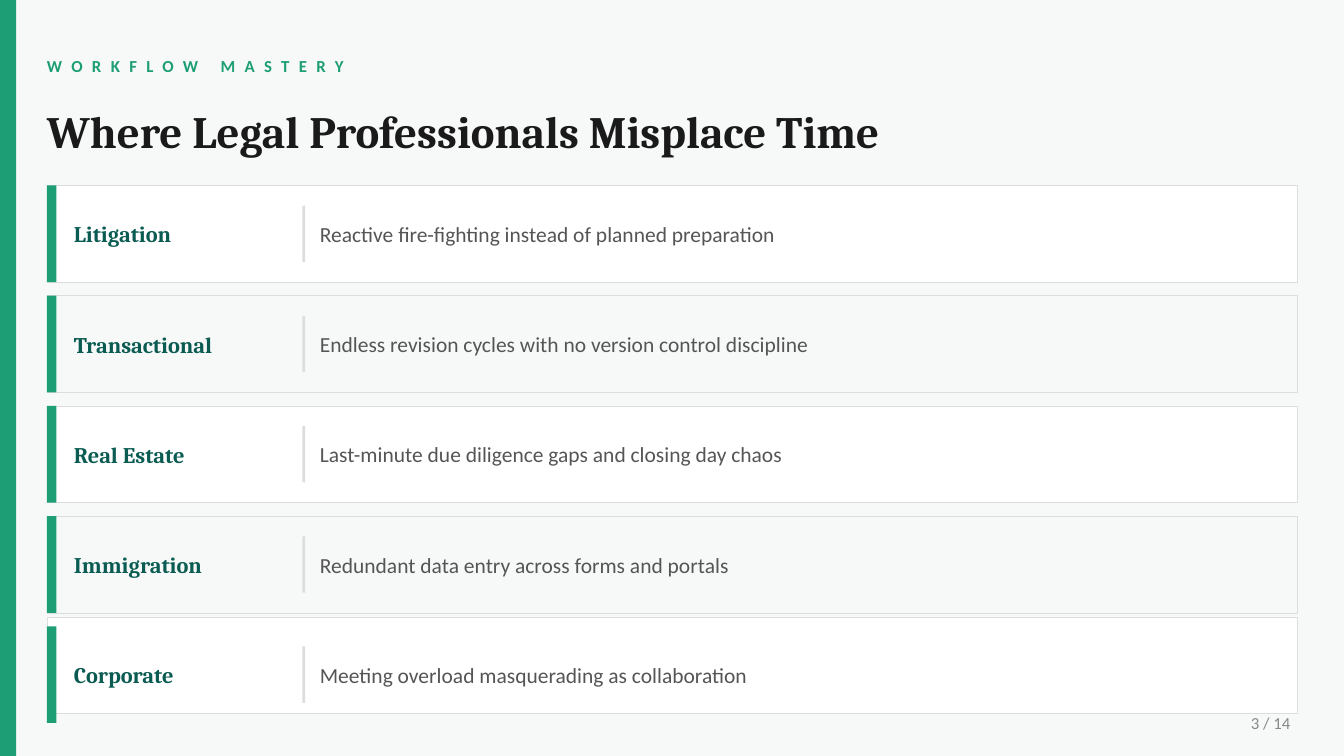
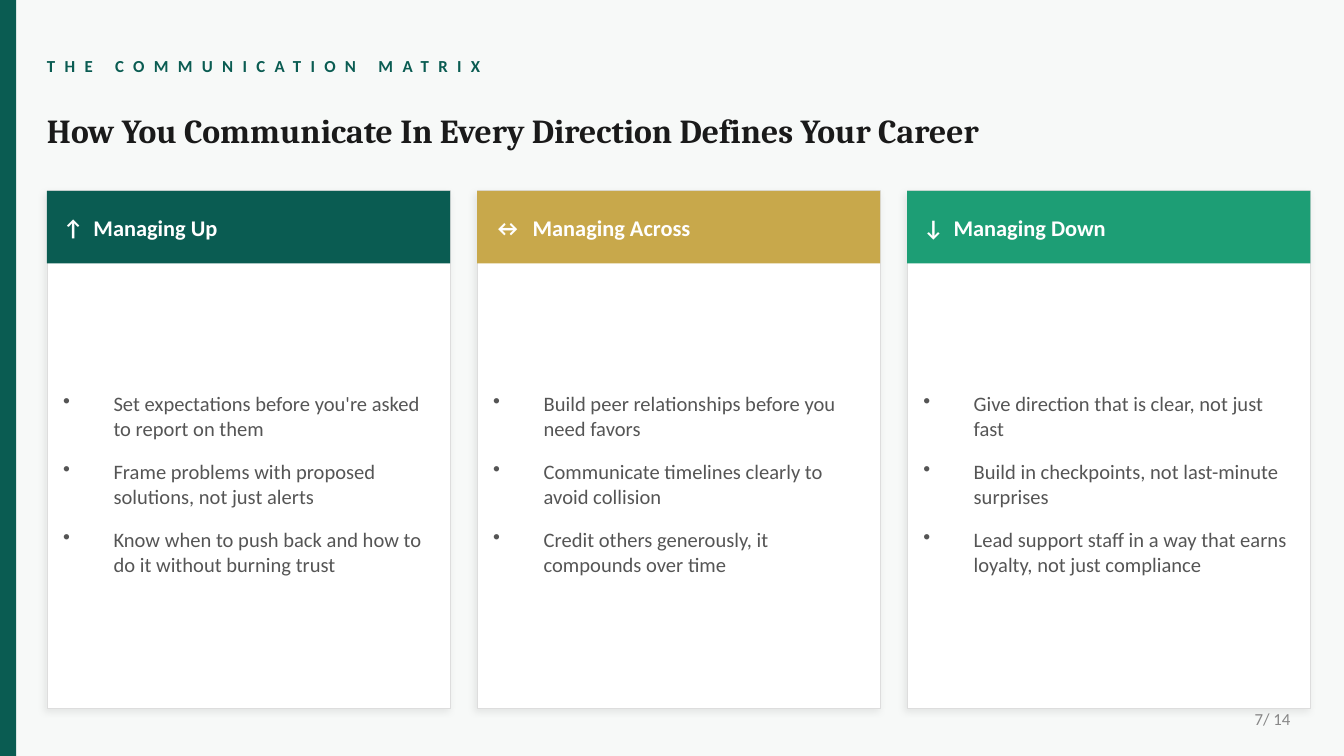
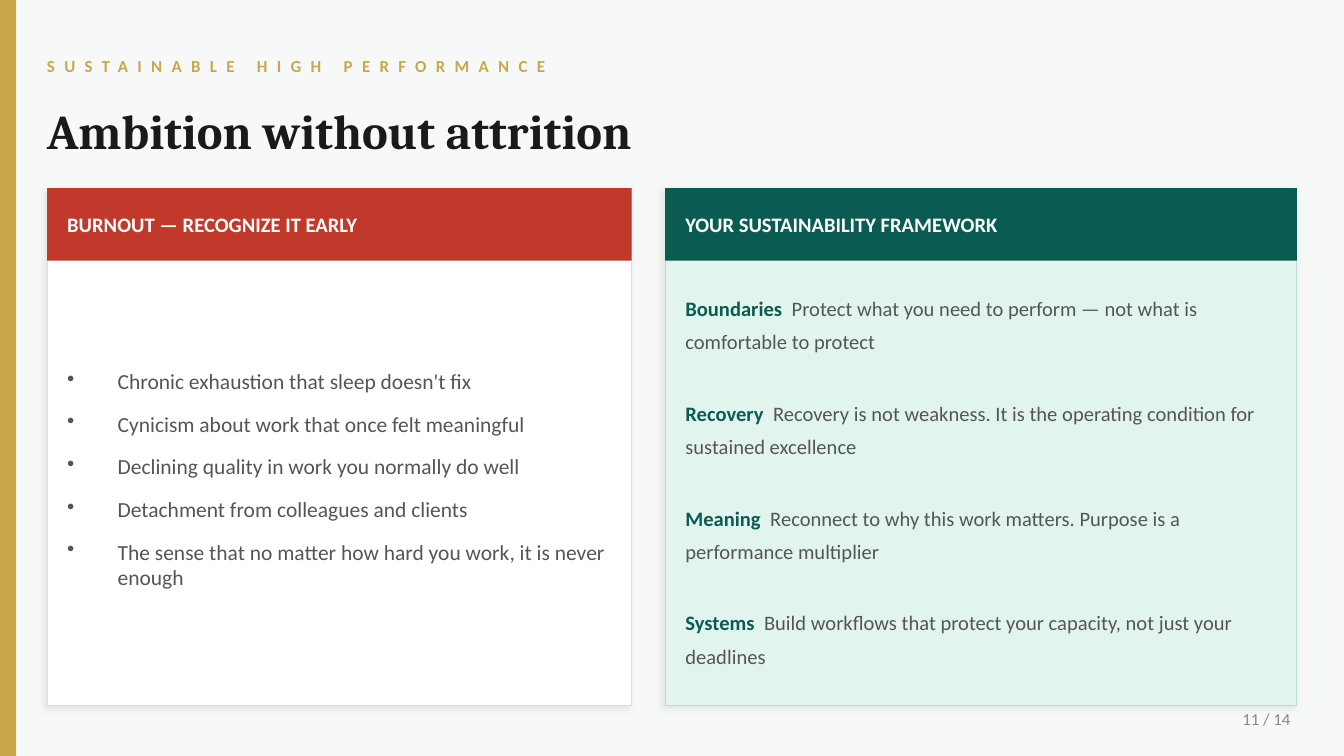
from lxml.etree import SubElement
from pptx import Presentation
from pptx.dml.color import RGBColor
from pptx.enum.shapes import MSO_SHAPE
from pptx.enum.text import MSO_ANCHOR, PP_ALIGN
from pptx.oxml.ns import qn
from pptx.util import Inches, Pt

SLIDE_W = 10
SLIDE_H = SLIDE_W * 9 / 16
MARGIN = 0.35
CARD_H, HEADER_H = 3.85, 0.54
BULLET_INDENT = Pt(27)

PAPER = RGBColor(0xF7, 0xF9, 0xF8)
WHITE = RGBColor(0xFF, 0xFF, 0xFF)
INK = RGBColor(0x1A, 0x1A, 0x1A)
BODY_GRAY = RGBColor(0x55, 0x55, 0x55)
PAGE_GRAY = RGBColor(0x88, 0x88, 0x88)
RULE_GRAY = RGBColor(0xDD, 0xDD, 0xDD)
GREEN = RGBColor(0x1D, 0x9E, 0x75)
TEAL = RGBColor(0x0A, 0x5C, 0x52)
GOLD = RGBColor(0xC8, 0xA8, 0x4B)
RED = RGBColor(0xC0, 0x39, 0x2B)
MINT = RGBColor(0xE1, 0xF5, 0xEE)
MINT_BORDER = RGBColor(0xB8, 0xDD, 0xD5)


def text_format(size, color, name="Calibri", bold=False):
    return {"size": Pt(size), "color": color, "name": name, "bold": bold}


PAGE_NUMBER = text_format(9, PAGE_GRAY)
ROW_LABEL = text_format(12, TEAL, "Cambria", True)
ROW_TEXT = text_format(11.5, BODY_GRAY)
CARD_TEXT = text_format(11, BODY_GRAY)
CARD_TERM = text_format(11, TEAL, bold=True)

TIME_LOSSES = [
    ("Litigation", "Reactive fire-fighting instead of planned preparation"),
    ("Transactional", "Endless revision cycles with no version control discipline"),
    ("Real Estate", "Last-minute due diligence gaps and closing day chaos"),
    ("Immigration", "Redundant data entry across forms and portals"),
    ("Corporate", "Meeting overload masquerading as collaboration"),
]
DIRECTIONS = [
    ("↑  Managing Up", TEAL, [
        "Set expectations before you're asked to report on them",
        "Frame problems with proposed solutions, not just alerts",
        "Know when to push back and how to do it without burning trust"]),
    ("↔  Managing Across", GOLD, [
        "Build peer relationships before you need favors",
        "Communicate timelines clearly to avoid collision",
        "Credit others generously, it compounds over time"]),
    ("↓  Managing Down", GREEN, [
        "Give direction that is clear, not just fast",
        "Build in checkpoints, not last-minute surprises",
        "Lead support staff in a way that earns loyalty, not just compliance"]),
]
BURNOUT_SIGNS = [
    "Chronic exhaustion that sleep doesn't fix",
    "Cynicism about work that once felt meaningful",
    "Declining quality in work you normally do well",
    "Detachment from colleagues and clients",
    "The sense that no matter how hard you work, it is never enough",
]
FRAMEWORK = [
    ("Boundaries  ", "Protect what you need to perform — not what is comfortable to protect"),
    ("Recovery  ", "Recovery is not weakness. It is the operating condition for sustained excellence"),
    ("Meaning  ", "Reconnect to why this work matters. Purpose is a performance multiplier"),
    ("Systems  ", "Build workflows that protect your capacity, not just your deadlines"),
]


def add_run(paragraph, text, style):
    run = paragraph.add_run()
    run.text = text
    for attribute, value in style.items():
        if attribute == "color":
            run.font.color.rgb = value
        else:
            setattr(run.font, attribute, value)


def add_text(slide, place, *runs, inset=True, **paragraph_format):
    """Add a one-paragraph box from (text, style) runs; inset=False removes margins."""
    box = slide.shapes.add_textbox(*map(Inches, place))
    frame = box.text_frame
    frame.word_wrap = True
    frame.vertical_anchor = MSO_ANCHOR.MIDDLE
    if not inset:
        for side in ("left", "top", "right", "bottom"):
            setattr(frame, f"margin_{side}", 0)
    for attribute, value in paragraph_format.items():
        setattr(frame.paragraphs[0], attribute, value)
    for text, style in runs:
        add_run(frame.paragraphs[0], text, style)
    return box


def add_bullets(slide, place, items, style, gap):
    box = add_text(slide, place, inset=False)
    frame = box.text_frame
    for _ in items[1:]:
        frame.add_paragraph()
    for element in box.element.iter(qn("a:p")):
        properties = element.get_or_add_pPr()
        properties.set("marL", str(BULLET_INDENT))
        properties.set("indent", str(-BULLET_INDENT))
        SubElement(properties, qn("a:buSzPct"), val="100000")
        SubElement(properties, qn("a:buChar"), char="•")
    for paragraph, item in zip(frame.paragraphs, items):
        paragraph.space_after = Pt(gap)
        add_run(paragraph, item, style)


def add_panel(slide, place, fill, border=None, border_width=0.5):
    panel = slide.shapes.add_shape(MSO_SHAPE.RECTANGLE, *map(Inches, place))
    panel.shadow.inherit = False
    panel.fill.solid()
    panel.fill.fore_color.rgb = fill
    if border is None:
        panel.line.fill.background()
    else:
        panel.line.color.rgb = border
        panel.line.width = Pt(border_width)
    return panel


def add_soft_shadow(panel):
    effects = panel.element.spPr.find(qn("a:effectLst"))
    shadow = SubElement(effects, qn("a:outerShdw"), blurRad=str(Pt(4)), dist=str(Pt(2)),
                        dir=str(135 * 60000), algn="bl", rotWithShape="0")
    black = SubElement(shadow, qn("a:srgbClr"), val="000000")
    SubElement(black, qn("a:alpha"), val="7000")


def add_page(deck, kicker, title, title_size, accent, page, page_place=(8.8, 5.25, 0.9, 0.2)):
    """Add a slide with background, page number, accent band, kicker and title."""
    slide = deck.slides.add_slide(deck.slide_layouts[6])
    slide.background.fill.solid()
    slide.background.fill.fore_color.rgb = PAPER
    add_text(slide, page_place, (page, PAGE_NUMBER), alignment=PP_ALIGN.RIGHT)
    add_panel(slide, (0, 0, 0.12, SLIDE_H), accent)
    kicker_box = add_text(slide, (MARGIN, 0.35, 9, 0.28),
                          (kicker, text_format(9, accent, bold=True)), inset=False)
    for properties in kicker_box.element.iter(qn("a:rPr")):
        properties.set("spc", "500")
    add_text(slide, (MARGIN, 0.72, 9, 0.5),
             (title, text_format(title_size, INK, "Cambria", True)), inset=False)
    return slide


def add_card(slide, place, heading, color, size, pad, header_gap,
             fill=WHITE, border=RULE_GRAY):
    left, top, width = place
    add_soft_shadow(add_panel(slide, (left, top, width, CARD_H), fill, border))
    add_panel(slide, (left, top, width, HEADER_H), color)
    add_text(slide, (left + pad, top + header_gap, width - 2 * pad, HEADER_H - 2 * header_gap),
             (heading, text_format(size, WHITE, bold=True)), inset=False)


def add_time_row(slide, top, fill, label, loss, bottom_limit):
    """Add one row, its card moved up where it would pass bottom_limit."""
    height = 0.72
    add_panel(slide, (MARGIN, min(top, bottom_limit - height), 9.3, height), fill, RULE_GRAY, 0.3)
    add_panel(slide, (MARGIN, top, 0.07, height), GREEN)
    add_text(slide, (0.55, top + 0.12, 1.6, 0.48), (label, ROW_LABEL), inset=False)
    add_panel(slide, (2.25, top + 0.15, 0.02, 0.42), RULE_GRAY)
    add_text(slide, (2.38, top + 0.1, 7.15, 0.52), (loss, ROW_TEXT), inset=False)


def build_time_losses(deck):
    page_top = 5.31
    slide = add_page(deck, "WORKFLOW MASTERY", "Where Legal Professionals Misplace Time",
                     24, GREEN, "3 / 14", (8.85, page_top, 0.85, 0.14))
    for index, (label, loss) in enumerate(TIME_LOSSES):
        fill = PAPER if index % 2 else WHITE
        add_time_row(slide, 1.38 + index * 0.82, fill, label, loss, page_top)


def build_communication_matrix(deck):
    slide = add_page(deck, "THE COMMUNICATION MATRIX",
                     "How You Communicate In Every Direction Defines Your Career",
                     18, TEAL, "7/ 14")
    width, pad = 3, 0.12
    for index, (heading, color, habits) in enumerate(DIRECTIONS):
        left = MARGIN + index * (width + 0.2)
        add_card(slide, (left, 1.42, width), heading, color, 12, pad, 0.06)
        add_bullets(slide, (left + pad, 2.05, width - 2 * pad, 3.1), habits, CARD_TEXT, 10)


def build_sustainability(deck):
    slide = add_page(deck, "SUSTAINABLE HIGH PERFORMANCE", "Ambition without attrition",
                     26, GOLD, "11 / 14")
    top, pad, header_gap = 1.4, 0.15, 0.07
    add_card(slide, (MARGIN, top, 4.35), "BURNOUT — RECOGNIZE IT EARLY", RED, 11, pad, header_gap)
    add_bullets(slide, (MARGIN + pad, 2.04, 4.05, 3.05), BURNOUT_SIGNS, ROW_TEXT, 9)
    left = 4.95
    add_card(slide, (left, top, 4.7), "YOUR SUSTAINABILITY FRAMEWORK", TEAL, 11, pad, header_gap,
             MINT, MINT_BORDER)
    for index, (term, advice) in enumerate(FRAMEWORK):
        add_text(slide, (left + pad, 2.06 + index * 0.78, 4.4, 0.65),
                 (term, CARD_TERM), (advice, CARD_TEXT), inset=False, line_spacing=1.35)


def main():
    deck = Presentation()
    deck.slide_width, deck.slide_height = Inches(SLIDE_W), Inches(SLIDE_H)
    build_time_losses(deck)
    build_communication_matrix(deck)
    build_sustainability(deck)
    deck.save("out.pptx")


if __name__ == "__main__":
    main()
